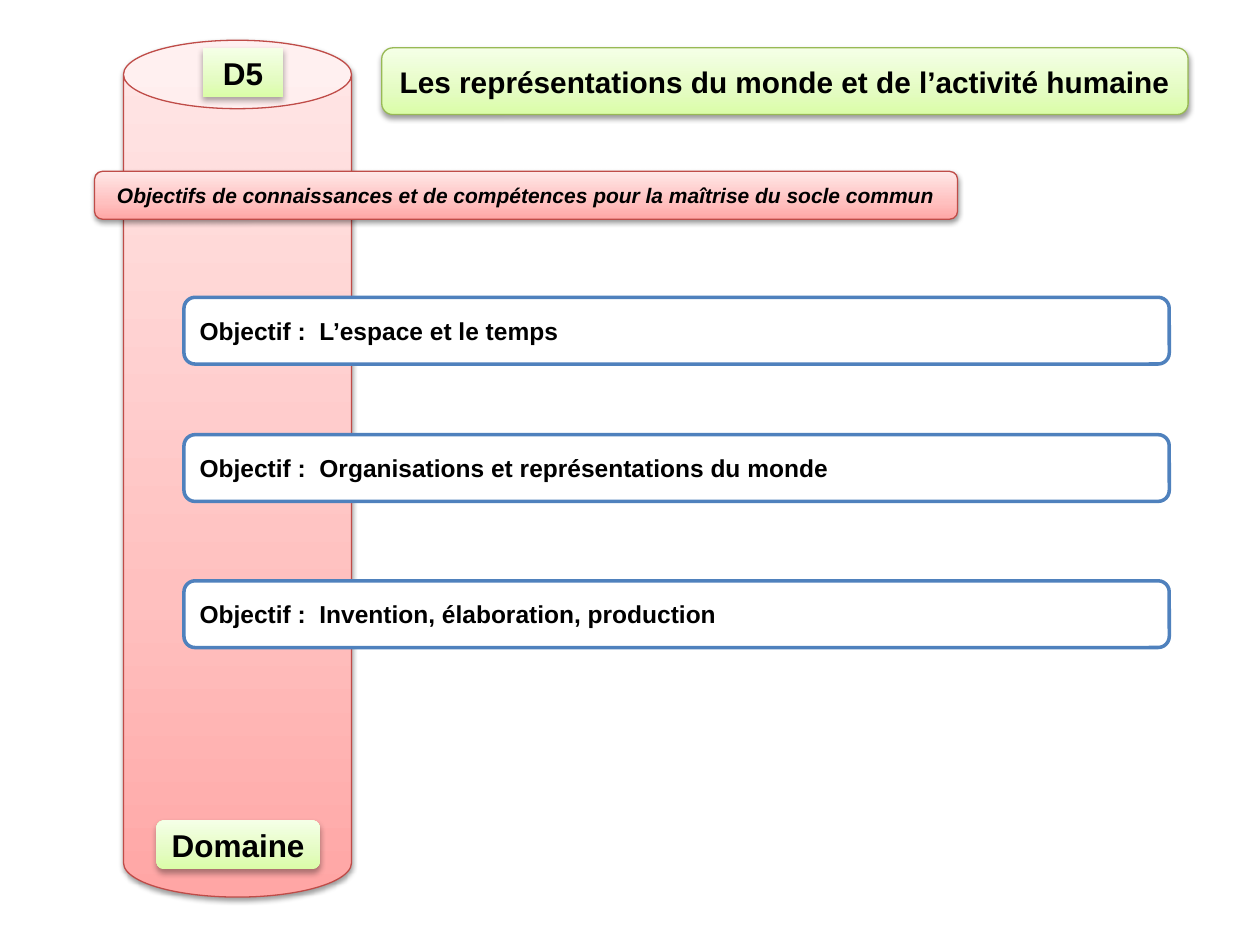
from dataclasses import dataclass

from lxml import etree
from pptx import Presentation
from pptx.dml.color import RGBColor
from pptx.enum import shapes, text
from pptx.oxml import ns
from pptx.util import Inches, Pt


@dataclass(frozen=True)
class Theme:
    font: str = "Arial"
    ink: str = "000000"
    white: str = "FFFFFF"
    blue: str = "4F81BD"
    red_line: str = "BF4C48"
    green_line: str = "98B955"
    reds: tuple = ((0, "FFA6A5"), (35, "FFC0BF"), (100, "FFE7E7"))
    greens: tuple = ((0, "DAFDA7"), (35, "E4FCC2"), (100, "F5FFE7"))
    thin: float = 0.75
    thick: float = 2
    label_size: int = 18
    title_size: int = 17
    goal_size: int = 14
    banner_size: int = 12
    # opacity in percent, then blur and distance in points
    outlined_shadow: tuple = (38, 3.1, 1.6)
    plain_shadow: tuple = (32, 3.5, 2.2)


THEME = Theme()
CAN = shapes.MSO_SHAPE.CAN
RECT = shapes.MSO_SHAPE.RECTANGLE
ROUND = shapes.MSO_SHAPE.ROUNDED_RECTANGLE

PILLAR = (0.98, 0.32, 1.81, 6.8)
CODE = ("D5", (1.61, 0.38, 0.64, 0.39))
DOMAIN = ("Domaine", (1.24, 6.51, 1.3, 0.39))
TITLE = ("Les représentations du monde et de l’activité humaine", (3.03, 0.38, 6.4, 0.53))
BANNER = (
    "Objectifs de connaissances et de compétences pour la maîtrise du socle commun",
    (0.75, 1.36, 6.85, 0.38),
)
GOALS = [  # top edge, wording
    (2.36, "L’espace et le temps"),
    (3.45, "Organisations et représentations du monde"),
    (4.61, "Invention, élaboration, production"),
]
GOAL_LEFT, GOAL_WIDTH, GOAL_HEIGHT = 1.46, 7.82, 0.53


def add_node(parent, tag, **attributes):
    values = {name: str(value) for name, value in attributes.items()}
    return etree.SubElement(parent, ns.qn(tag), values)


def fill_gradient(shape, stops):
    """Fill with stops that run from the bottom edge to the top."""
    properties = shape.element.spPr
    gradient = add_node(properties, "a:gradFill", rotWithShape=1)
    stop_list = add_node(gradient, "a:gsLst")
    for percent, color in stops:
        stop = add_node(stop_list, "a:gs", pos=percent * 1000)
        add_node(stop, "a:srgbClr", val=color)
    add_node(gradient, "a:lin", ang=270 * 60000, scaled=0)
    properties.find(ns.qn("a:prstGeom")).addnext(gradient)


def cast_shadow(shape, opacity, blur, distance):
    effects = shape.element.spPr.find(ns.qn("a:effectLst"))
    shadow = add_node(effects, "a:outerShdw", blurRad=int(Pt(blur)),
                      dist=int(Pt(distance)), dir=90 * 60000, rotWithShape=0)
    color = add_node(shadow, "a:srgbClr", val=THEME.ink)
    add_node(color, "a:alpha", val=opacity * 1000)


def add_block(page, kind, place, fill, line=None, width=THEME.thin, shadow=None):
    """Add a shape; fill is one colour or a tuple of gradient stops."""
    shape = page.shapes.add_shape(kind, *map(Inches, place))
    shape.shadow.inherit = False
    if line:
        shape.line.color.rgb = RGBColor.from_string(line)
        shape.line.width = Pt(width)
    else:
        shape.line.fill.background()
    if isinstance(fill, str):
        shape.fill.solid()
        shape.fill.fore_color.rgb = RGBColor.from_string(fill)
    else:
        fill_gradient(shape, fill)
    if shadow:
        cast_shadow(shape, *shadow)
    return shape


def write(shape, words, size, align=text.PP_ALIGN.CENTER, italic=False):
    frame = shape.text_frame
    frame.text = words
    frame.word_wrap = False
    frame.vertical_anchor = text.MSO_ANCHOR.MIDDLE
    para = frame.paragraphs[0]
    para.alignment = align
    font = para.runs[0].font
    font.name, font.size = THEME.font, Pt(size)
    font.bold, font.italic = True, italic
    font.color.rgb = RGBColor.from_string(THEME.ink)


def add_label(page, kind, words, place):
    label = add_block(page, kind, place, THEME.greens, shadow=THEME.plain_shadow)
    write(label, words, THEME.label_size)


def main():
    deck = Presentation()
    deck.slide_width, deck.slide_height = Inches(10), Inches(7.5)
    page = deck.slides.add_slide(deck.slide_layouts[6])

    pillar = add_block(page, CAN, PILLAR, THEME.reds, THEME.red_line,
                       shadow=THEME.outlined_shadow)
    pillar.adjustments[0] = 0.3
    add_label(page, RECT, *CODE)

    for top, goal in GOALS:
        place = (GOAL_LEFT, top, GOAL_WIDTH, GOAL_HEIGHT)
        box = add_block(page, ROUND, place, THEME.white, THEME.blue, THEME.thick)
        write(box, f"Objectif :  {goal}", THEME.goal_size, text.PP_ALIGN.LEFT)
        box.text_frame.word_wrap = True

    words, place = TITLE
    title = add_block(page, ROUND, place, THEME.greens, THEME.green_line,
                      shadow=THEME.outlined_shadow)
    write(title, words, THEME.title_size)

    words, place = BANNER
    banner = add_block(page, ROUND, place, THEME.reds, THEME.red_line,
                       shadow=THEME.outlined_shadow)
    write(banner, words, THEME.banner_size, italic=True)

    add_label(page, ROUND, *DOMAIN)
    deck.save("out.pptx")


if __name__ == "__main__":
    main()
